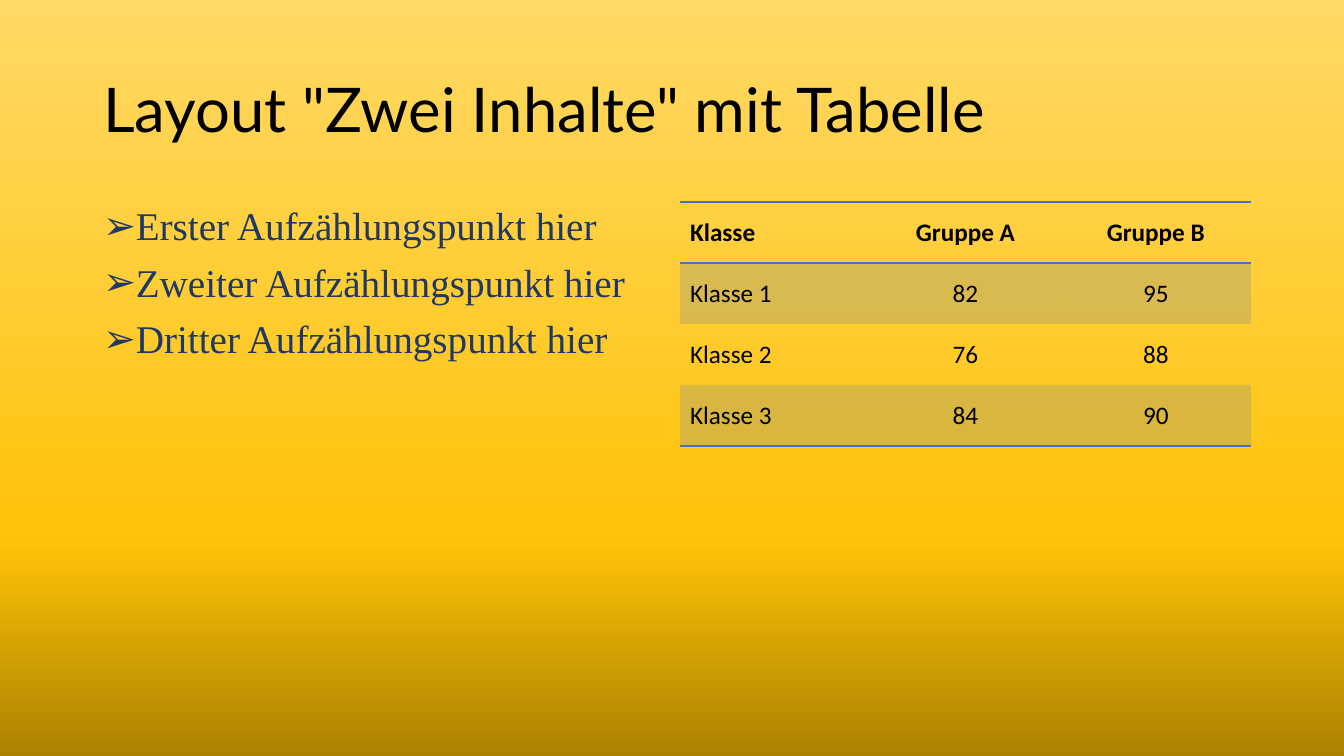
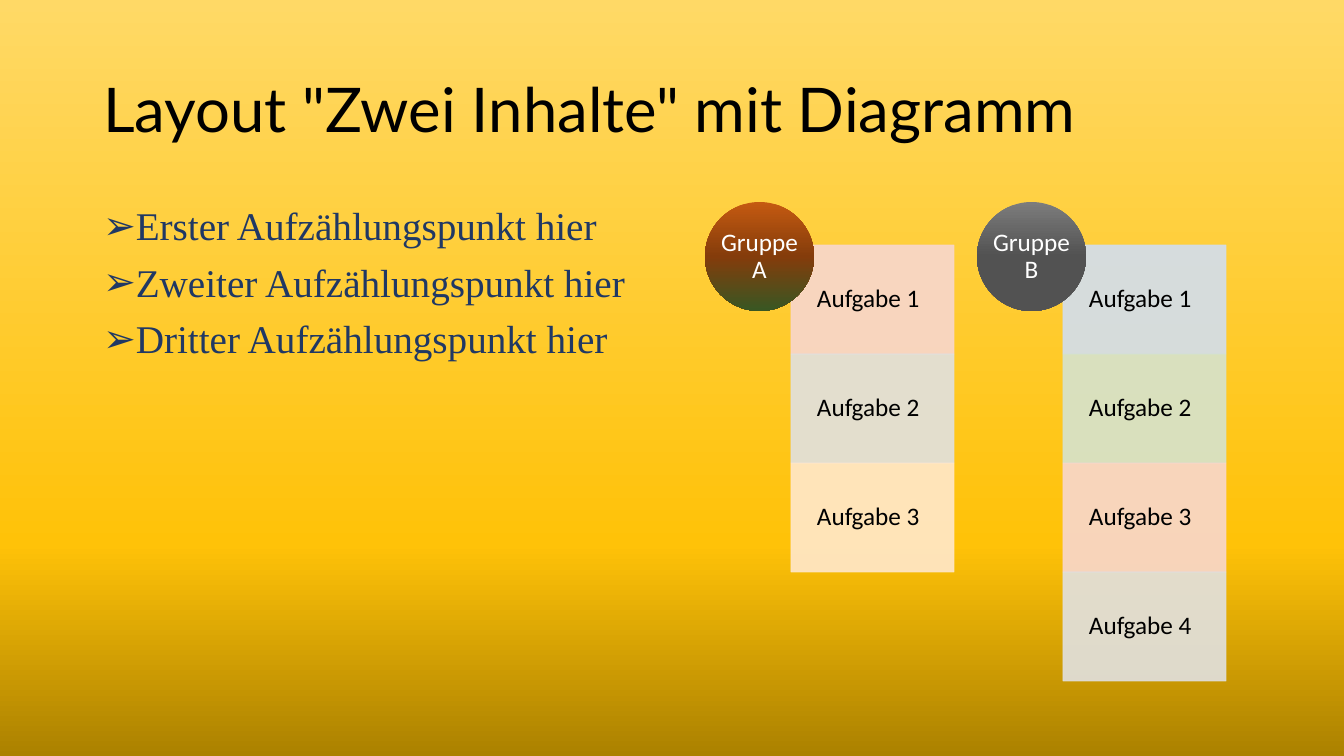
from dataclasses import dataclass

from lxml.etree import SubElement
from pptx import Presentation
from pptx.dml.color import RGBColor
from pptx.enum.shapes import MSO_SHAPE
from pptx.enum.text import MSO_ANCHOR, MSO_AUTO_SIZE, PP_ALIGN
from pptx.oxml.ns import qn
from pptx.util import Emu, Pt

WIDE, HIGH = 1344, 756
SCALE = 12192000 / WIDE


def px(n: int) -> Emu:
    return Emu(round(n * SCALE))


@dataclass(frozen=True)
class Theme:
    black: str = "000000"
    white: str = "FFFFFF"
    navy: str = "203864"
    blue: str = "4472C4"
    peach: str = "F8D7CE"
    grey: str = "E1E1E1"
    cream: str = "FFE8CC"
    ice: str = "D2DEEF"
    mint: str = "D5E3CF"
    gold: tuple = ((0, "AB8100"), (28, "FFC208"), (100, "FFD966"))
    rust: tuple = ((0, "C55A11"), (50, "843C0B"), (100, "385723"))
    slate: tuple = ((0, "7C7C7C"), (50, "525252"), (100, "525252"))
    head: str = "Lato"
    serif: str = "Times New Roman"
    sans: str = "Calibri"
    big: int = 44
    mid: int = 28
    small: int = 18


THEME = Theme()


@dataclass(frozen=True)
class Box:
    x: int
    y: int
    w: int
    h: int

    def emu(self) -> tuple:
        return px(self.x), px(self.y), px(self.w), px(self.h)

    def place(self, shape) -> None:
        shape.left, shape.top, shape.width, shape.height = self.emu()


@dataclass(frozen=True)
class Group:
    name: str
    stops: tuple
    fills: tuple


TITLE = Box(93, 40, 1159, 146)
BODY = Box(93, 202, 572, 480)
GRID = Box(680, 202, 571, 244)
DISC = Box(705, 202, 109, 109)
TASK = Box(791, 245, 163, 109)
PITCH = 272

POINTS = [f"{word} Aufzählungspunkt hier" for word in ("Erster", "Zweiter", "Dritter")]
ROWS = [
    ("Klasse", "Gruppe A", "Gruppe B"),
    ("Klasse 1", "82", "95"),
    ("Klasse 2", "76", "88"),
    ("Klasse 3", "84", "90"),
]
GROUPS = [
    Group("Gruppe A", THEME.rust, (THEME.peach, THEME.grey, THEME.cream)),
    Group("Gruppe B", THEME.slate, (THEME.ice, THEME.mint, THEME.peach, THEME.grey)),
]


def rgb(code: str) -> RGBColor:
    return RGBColor.from_string(code)


def write(frame, *lines: str, font: str = THEME.sans, size: int = THEME.small,
          color: str = THEME.black, bold: bool = False, align=PP_ALIGN.LEFT,
          anchor=MSO_ANCHOR.MIDDLE, lead: float = 0.9, gap: int = 0,
          bullet: str = "", inset: tuple = ()) -> None:
    """Fill a text frame; inset is left, top, right, bottom in px."""
    frame.word_wrap = True
    frame.auto_size = MSO_AUTO_SIZE.NONE
    frame.vertical_anchor = anchor
    if inset:
        (frame.margin_left, frame.margin_top,
         frame.margin_right, frame.margin_bottom) = map(px, inset)
    for i, line in enumerate(lines):
        para = frame.add_paragraph() if i else frame.paragraphs[0]
        para.alignment = align
        para.line_spacing = lead
        para.space_before = Pt(gap if i else 0)
        if bullet:
            props = para._p.get_or_add_pPr()
            props.set("marL", "228600")
            props.set("indent", "-228600")
            SubElement(props, qn("a:buFont"), typeface="Arial")
            SubElement(props, qn("a:buChar"), char=bullet)
        run = para.add_run()
        run.text = line
        run.font.name = font
        run.font.size = Pt(size)
        run.font.bold = bold
        run.font.color.rgb = rgb(color)


def blend(fill, root, stops: tuple, angle: int) -> None:
    """Give the fill found under root a linear gradient, angle clockwise."""
    fill.gradient()
    grad = root.find(".//" + qn("a:gradFill"))
    marks = grad.find(qn("a:gsLst"))
    for old in list(marks):
        marks.remove(old)
    for pos, code in stops:
        mark = SubElement(marks, qn("a:gs"), pos=str(pos * 1000))
        SubElement(mark, qn("a:srgbClr"), val=code)
    grad.find(qn("a:lin")).set("ang", str(angle * 60000))


def fade(root, share: int) -> None:
    """Set the opacity, in percent, of all colours under root."""
    for color in list(root.iter(qn("a:srgbClr"))):
        SubElement(color, qn("a:alpha"), val=str(share * 1000))


def rule(cell, tags: tuple) -> None:
    """Draw the named borders of a cell."""
    props = cell._tc.get_or_add_tcPr()
    for i, tag in enumerate(tags):
        line = SubElement(props, qn(f"a:{tag}"), w="12700")
        solid = SubElement(line, qn("a:solidFill"))
        SubElement(solid, qn("a:srgbClr"), val=THEME.blue)
        props.insert(i, line)


def start(deck, title: str):
    """Add a slide with its title and list."""
    slide = deck.slides.add_slide(deck.slide_layouts[1])
    head, body = slide.shapes.title, slide.placeholders[1]
    TITLE.place(head)
    BODY.place(body)
    write(head.text_frame, title, font=THEME.head, size=THEME.big)
    write(body.text_frame, *POINTS, font=THEME.serif, size=THEME.mid,
          color=THEME.navy, anchor=MSO_ANCHOR.TOP, gap=10, bullet="➢")
    return slide


def draw_grid(slide) -> None:
    table = slide.shapes.add_table(len(ROWS), len(ROWS[0]), *GRID.emu()).table
    table.first_row = table.horz_banding = False
    plain = "{2D5ABB26-0587-4C30-8999-92F81FD0307C}"
    table._tbl.find(".//" + qn("a:tableStyleId")).text = plain
    for r, row in enumerate(ROWS):
        for c, text in enumerate(row):
            cell = table.cell(r, c)
            cell.vertical_anchor = MSO_ANCHOR.MIDDLE
            write(cell.text_frame, text, bold=r == 0, lead=1.0,
                  align=PP_ALIGN.CENTER if c else PP_ALIGN.LEFT)
            if r % 2:
                cell.fill.solid()
                cell.fill.fore_color.rgb = rgb(THEME.blue)
                fade(cell._tc.tcPr, 20)
            else:
                cell.fill.background()
            if r == 0:
                rule(cell, ("lnT", "lnB"))
            elif r == len(ROWS) - 1:
                rule(cell, ("lnB",))


def draw_task(slide, box: Box, text: str, color: str) -> None:
    shape = slide.shapes.add_shape(MSO_SHAPE.RECTANGLE, *box.emu())
    shape.shadow.inherit = False
    shape.fill.solid()
    shape.fill.fore_color.rgb = rgb(color)
    shape.line.color.rgb = rgb(color)
    shape.line.width = Pt(0.5)
    fade(shape._element.spPr, 90)
    write(shape.text_frame, text, inset=(26, 14, 14, 14))


def draw_disc(slide, box: Box, group: Group) -> None:
    shape = slide.shapes.add_shape(MSO_SHAPE.OVAL, *box.emu())
    shape.shadow.inherit = False
    blend(shape.fill, shape._element.spPr, group.stops, 90)
    shape.line.fill.background()
    write(shape.text_frame, group.name, color=THEME.white,
          align=PP_ALIGN.CENTER, inset=(0, 0, 0, 0))


def draw_groups(slide) -> None:
    for g, group in enumerate(GROUPS):
        shift = g * PITCH
        for i, color in enumerate(group.fills):
            box = Box(TASK.x + shift, TASK.y + i * TASK.h, TASK.w, TASK.h)
            draw_task(slide, box, f"Aufgabe {i + 1}", color)
        draw_disc(slide, Box(DISC.x + shift, DISC.y, DISC.w, DISC.h), group)


def main() -> None:
    deck = Presentation()
    deck.slide_width, deck.slide_height = px(WIDE), px(HIGH)
    master = deck.slide_master
    blend(master.background.fill, master.element, THEME.gold, 270)
    draw_grid(start(deck, 'Layout "Zwei Inhalte" mit Tabelle'))
    draw_groups(start(deck, 'Layout "Zwei Inhalte" mit Diagramm'))
    deck.save("out.pptx")


if __name__ == "__main__":
    main()
